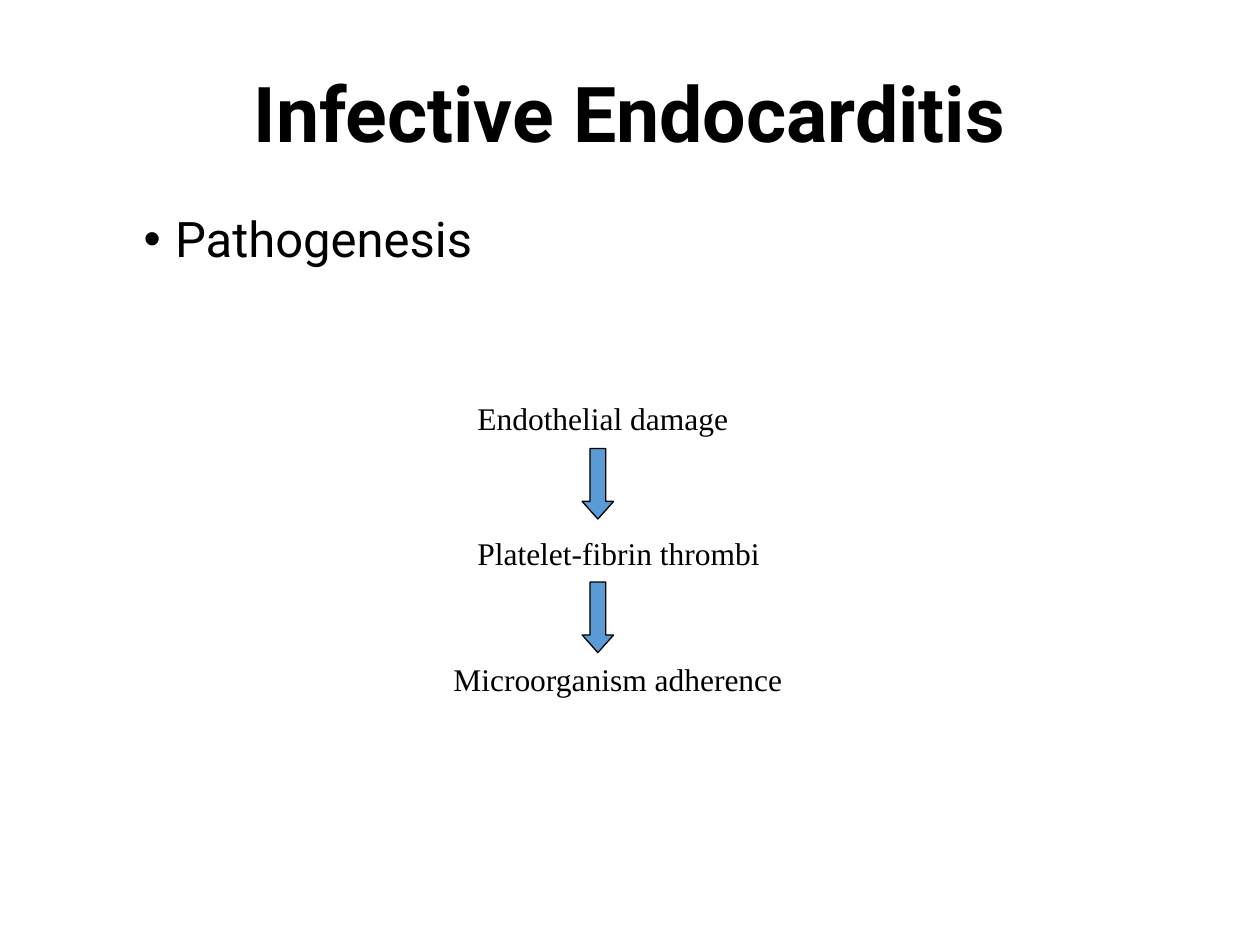
from lxml import etree
from pptx import Presentation
from pptx.dml.color import RGBColor
from pptx.enum import shapes, text
from pptx.oxml.ns import qn
from pptx.util import Inches, Pt

BLACK = RGBColor(0x00, 0x00, 0x00)
WHITE = RGBColor(0xFF, 0xFF, 0xFF)
BLUE = RGBColor(0x5B, 0x9B, 0xD5)


def write(sp, content, size, font, bold=False, align=text.PP_ALIGN.LEFT,
          spacing=1.0, anchor=text.MSO_ANCHOR.TOP, bullet=None):
    tf = sp.text_frame
    tf.word_wrap = True
    tf.vertical_anchor = anchor
    p = tf.paragraphs[0]
    p.alignment = align
    p.line_spacing = spacing
    p.space_before = Pt(0)
    if bullet:
        pPr = p._p.get_or_add_pPr()
        pPr.set("marL", str(Inches(0.25)))
        pPr.set("indent", str(Inches(-0.25)))
        etree.SubElement(pPr, qn("a:buFont")).set("typeface", "Arial")
        etree.SubElement(pPr, qn("a:buChar")).set("char", bullet)
    r = p.add_run()
    r.text = content
    r.font.size = Pt(size)
    r.font.name = font
    r.font.bold = bold
    r.font.color.rgb = BLACK


prs = Presentation()
prs.slide_width, prs.slide_height = Inches(10), Inches(7.5)
s = prs.slides.add_slide(prs.slide_layouts[1])
s.background.fill.solid()
s.background.fill.fore_color.rgb = WHITE

title = s.shapes.title
title.left, title.top = Inches(0.69), Inches(0.21)
title.width, title.height = Inches(8.62), Inches(1.45)
write(title, "Infective Endocarditis", 44, "Roboto", bold=True,
      align=text.PP_ALIGN.CENTER, spacing=0.9, anchor=text.MSO_ANCHOR.MIDDLE)

body = s.placeholders[1]
body.left, body.top = Inches(1.04), Inches(1.66)
body.width, body.height = Inches(8.27), Inches(4.76)
write(body, "Pathogenesis", 28, "Roboto", spacing=0.9, bullet="•")

steps = [
    ("Endothelial damage", 3.69, 3.12, 2.88),
    ("Platelet-fibrin thrombi", 3.69, 4.19, 2.88),
    ("Microorganism adherence", 3.5, 5.19, 3.44),
]
for label, left, top, width in steps:
    sp = s.shapes.add_textbox(Inches(left), Inches(top), Inches(width), Inches(0.4))
    sp.text_frame.auto_size = text.MSO_AUTO_SIZE.SHAPE_TO_FIT_TEXT
    write(sp, label, 18, "Times New Roman")

for top in (3.56, 4.62):
    arrow = s.shapes.add_shape(shapes.MSO_SHAPE.DOWN_ARROW, Inches(4.62), Inches(top),
                               Inches(0.25), Inches(0.56))
    arrow.adjustments[0] = 0.5
    arrow.adjustments[1] = 0.56
    arrow.shadow.inherit = False
    arrow.fill.solid()
    arrow.fill.fore_color.rgb = BLUE
    arrow.line.color.rgb = BLACK
    arrow.line.width = Pt(0.75)

prs.save("out.pptx")
